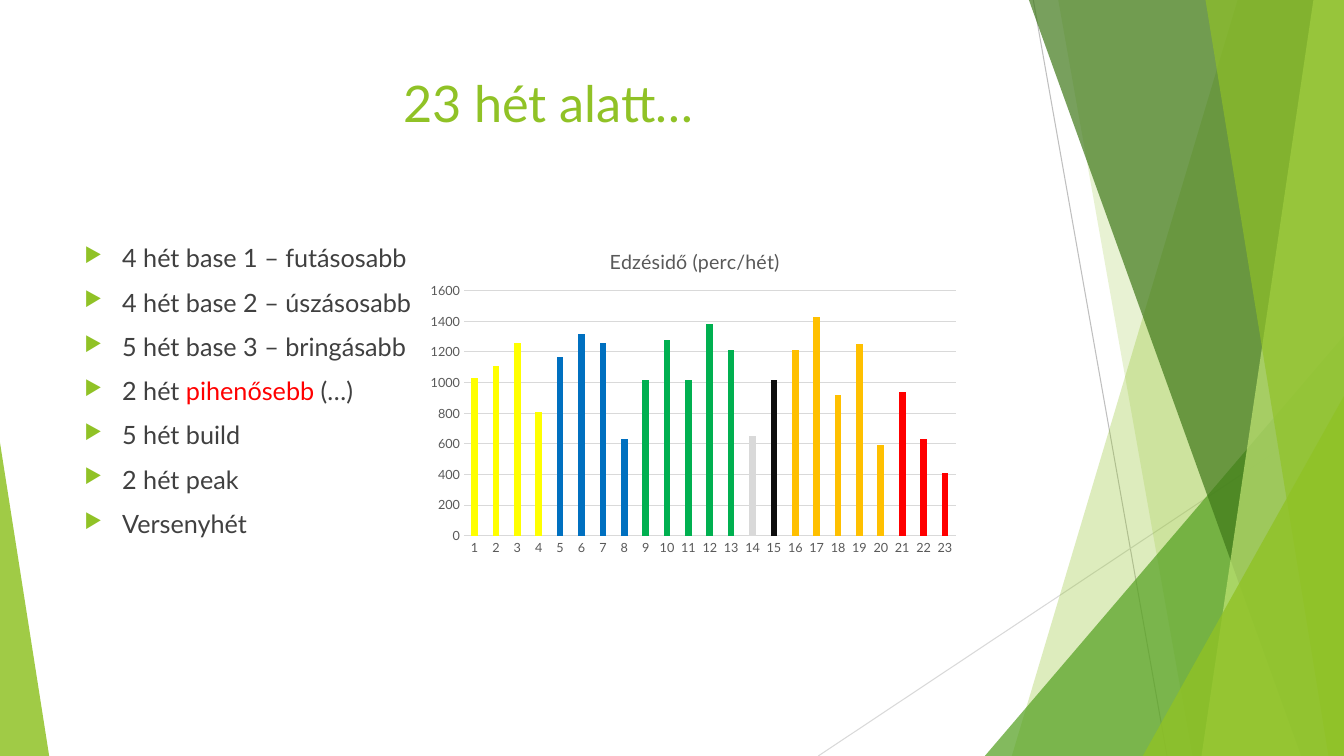
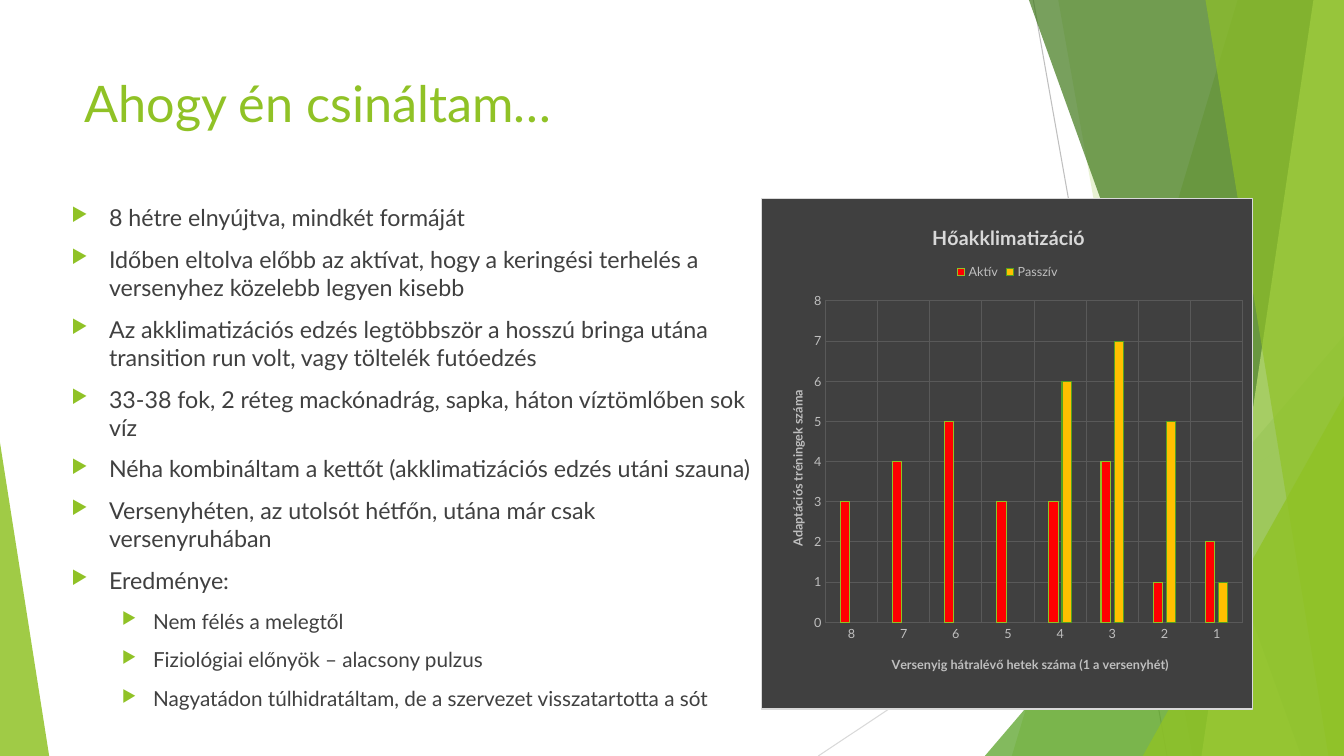
import dataclasses

import lxml.etree
import pptx
import pptx.chart.data
import pptx.dml.color
import pptx.enum.chart
import pptx.enum.shapes
import pptx.enum.text
import pptx.oxml.ns
import pptx.util

Cm = pptx.util.Cm
Pt = pptx.util.Pt
qn = pptx.oxml.ns.qn


@dataclasses.dataclass(frozen=True)
class Theme:
    font: str = "Lato"
    lime: str = "90C226"
    green: str = "54A021"
    forest: str = "3F7819"
    pale: str = "C0E474"
    text: str = "404040"
    accent: str = "FF0000"
    amber: str = "FFC000"
    chart_text: str = "595959"
    light_text: str = "BFBFBF"
    light_title: str = "D9D9D9"
    rule: str = "D9D9D9"
    title_size: float = 36
    chart_title_size: float = 14
    axis_size: float = 9
    hairline: float = 0.75


T = Theme()
WIDTH, HEIGHT = 33.87, 19.05

# Left indent and hanging indent of each bullet level, in cm
INDENTS = [(0.95, -0.95), (2.06, -0.79)]


# Helpers
def rgb(code):
    return pptx.dml.color.RGBColor.from_string(code)


def set_format(obj, fmt):
    for name, value in fmt.items():
        setattr(obj, name, value)


def set_font(font, size, color, bold=False):
    set_format(font, {"name": T.font, "size": Pt(size), "bold": bold})
    font.color.rgb = rgb(color)


def set_line(line, color):
    line.color.rgb = rgb(color)
    line.width = Pt(T.hairline)


def sub(parent, tag, **attrs):
    el = lxml.etree.SubElement(parent, qn(tag))
    for name, value in attrs.items():
        el.set(name, str(value))
    return el


# Backdrop
def style_facet(sp, color, opacity):
    sp.shadow.inherit = False
    sp.fill.solid()
    sp.fill.fore_color.rgb = rgb(color)
    sp.line.fill.background()
    clr = sp.element.spPr.find(qn("a:solidFill")).find(qn("a:srgbClr"))
    sub(clr, "a:alpha", val=opacity * 1000)


def add_rule(s, x1, y1, x2, y2, color):
    c = s.shapes.add_connector(pptx.enum.shapes.MSO_CONNECTOR.STRAIGHT,
                               Cm(x1), Cm(y1), Cm(x2), Cm(y2))
    set_line(c.line, color)
    sub(c.element.spPr, "a:effectLst")


def add_band(s, top_x, bottom_x, color, opacity):
    """Full-height band from a slanted left edge to the slide's right edge."""
    fb = s.shapes.build_freeform(Cm(top_x), 0)
    fb.add_line_segments([(Cm(WIDTH), 0), (Cm(WIDTH), Cm(HEIGHT)),
                          (Cm(bottom_x), Cm(HEIGHT))])
    style_facet(fb.convert_to_shape(), color, opacity)


def add_corner(s, left, top, right, apex, color, opacity):
    """Triangle standing on the slide's bottom edge."""
    sp = s.shapes.add_shape(pptx.enum.shapes.MSO_SHAPE.ISOSCELES_TRIANGLE,
                            Cm(left), Cm(top), Cm(right - left), Cm(HEIGHT - top))
    sp.adjustments[0] = apex
    style_facet(sp, color, opacity)


def add_backdrop(s):
    add_rule(s, 26.04, 0, 29.41, HEIGHT, "BFBFBF")
    add_rule(s, WIDTH, 10.24, 20.62, HEIGHT, T.rule)
    add_band(s, 31.19, 25.5, T.lime, 30)
    add_band(s, 26.67, 30.05, T.lime, 20)
    add_corner(s, 24.82, 8.46, WIDTH, 1, T.green, 72)
    add_band(s, 25.93, 32.79, T.forest, 70)
    add_band(s, 33.1, 30.28, T.pale, 70)
    add_band(s, 30.38, 33.48, T.lime, 65)
    add_corner(s, 28.8, 9.98, WIDTH, 1, T.lime, 80)
    add_corner(s, 0, 11.15, 1.24, 0, T.lime, 85)


# Text
def add_text_frame(s, left, top, width, height):
    tf = s.shapes.add_textbox(Cm(left), Cm(top), Cm(width), Cm(height)).text_frame
    tf.word_wrap = True
    return tf


def add_run(p, text, size, color):
    r = p.add_run()
    r.text = text
    set_font(r.font, size, color)


def add_title(s, text, align):
    p = add_text_frame(s, 1.88, 1.7, 23.88, 3.66).paragraphs[0]
    p.alignment = align
    add_run(p, text, T.title_size, T.lime)


def add_bullets(s, box, items, sizes):
    """Each item is (level, [(text, color), ...])."""
    tf = add_text_frame(s, *box)
    for i, (level, runs) in enumerate(items):
        p = tf.add_paragraph() if i else tf.paragraphs[0]
        set_format(p, {"level": level, "space_before": Pt(10)})
        pPr = p._p.get_or_add_pPr()
        margin, hang = INDENTS[level]
        pPr.set("marL", str(Cm(margin)))
        pPr.set("indent", str(Cm(hang)))
        sub(sub(pPr, "a:buClr"), "a:srgbClr", val=T.lime)
        sub(pPr, "a:buSzPct", val=80000)
        sub(pPr, "a:buChar", char="▶")
        for text, color in runs:
            add_run(p, text, sizes[level], color)


# Charts
def place(el, index, **fractions):
    """Put a chart part at fractions of the chart's size."""
    for old in el.findall(qn("c:layout")):
        el.remove(old)
    layout = lxml.etree.Element(qn("c:layout"))
    manual = sub(layout, "c:manualLayout")
    if "w" in fractions:
        sub(manual, "c:layoutTarget", val="inner")
    for axis in "xy":
        sub(manual, f"c:{axis}Mode", val="edge")
    for name, value in fractions.items():
        sub(manual, f"c:{name}", val=value)
    el.insert(index, layout)


def set_chart_title(owner, title, text, size, color, bold, x, y):
    set_format(owner, {"has_title": True})
    tf = getattr(owner, title).text_frame
    tf.text = text
    set_font(tf.paragraphs[0].runs[0].font, size, color, bold)
    place(getattr(owner, title)._element, 1, x=x, y=y)


def style_axis(axis, color, grid=None, line=None):
    none = pptx.enum.chart.XL_TICK_MARK.NONE
    set_format(axis, {"major_tick_mark": none, "minor_tick_mark": none,
                      "has_major_gridlines": grid is not None})
    set_font(axis.tick_labels.font, T.axis_size, color)
    if grid:
        set_line(axis.major_gridlines.format.line, grid)
    if line:
        set_line(axis.format.line, line)
    else:
        axis.format.line.fill.background()


def add_column_chart(s, box, cats, series, gap, overlap, top, step, plot_area):
    data = pptx.chart.data.CategoryChartData()
    data.categories = cats
    for name, values in series:
        data.add_series(name, values)
    chart = s.shapes.add_chart(pptx.enum.chart.XL_CHART_TYPE.COLUMN_CLUSTERED,
                               *map(Cm, box), data).chart
    set_font(chart.font, 10, "000000")
    chart.has_legend = False
    set_format(chart.plots[0], {"gap_width": gap, "overlap": overlap,
                                "vary_by_categories": False})
    set_format(chart.value_axis, {"minimum_scale": 0, "maximum_scale": top,
                                  "major_unit": step})
    place(chart.element.find(qn("c:chart")).find(qn("c:plotArea")), 0, **plot_area)
    return chart


def fill_bar(bar, color, line=None):
    bar.format.fill.solid()
    bar.format.fill.fore_color.rgb = rgb(color)
    if line:
        set_line(bar.format.line, line)


def fill_chart_area(chart, color, border):
    spPr = lxml.etree.Element(qn("c:spPr"))
    sub(sub(spPr, "a:solidFill"), "a:srgbClr", val=color)
    ln = sub(spPr, "a:ln", w=Pt(T.hairline))
    sub(sub(ln, "a:solidFill"), "a:srgbClr", val=border)
    chart.element.find(qn("c:chart")).addnext(spPr)


# Slides
def build_weeks(s):
    add_title(s, "23 hét alatt…", pptx.enum.text.PP_ALIGN.CENTER)
    lines = ["4 hét base 1 – futásosabb", "4 hét base 2 – úszásosabb",
             "5 hét base 3 – bringásabb", "2 hét |pihenősebb| (…)",
             "5 hét build", "2 hét peak", "Versenyhét"]
    # Text between bars is highlighted
    items = [(0, [(part, T.accent if i % 2 else T.text)
                  for i, part in enumerate(line.split("|"))]) for line in lines]
    add_bullets(s, (1.88, 5.99, 23.88, 10.77), items, [18])

    phases = [("FFFF00", [1030, 1110, 1260, 810]),
              ("0070C0", [1170, 1320, 1260, 630]),
              ("00B050", [1020, 1280, 1020, 1380, 1210]),
              ("D9D9D9", [650]),
              ("0D0D0D", [1020]),
              (T.amber, [1210, 1430, 920, 1250, 590]),
              (T.accent, [940, 630, 410])]
    bars = [(color, v) for color, values in phases for v in values]
    chart = add_column_chart(
        s, (10.59, 5.72, 13.77, 8.46), [str(i + 1) for i in range(len(bars))],
        [("Edzésidő", [v for _, v in bars])], 219, -27, 1600, 200,
        {"x": 0.08, "y": 0.19, "w": 0.9, "h": 0.73})
    set_chart_title(chart, "chart_title", "Edzésidő (perc/hét)",
                    T.chart_title_size, T.chart_text, False, 0.34, 0.05)
    style_axis(chart.category_axis, T.chart_text, line=T.rule)
    style_axis(chart.value_axis, T.chart_text, grid=T.rule)
    ser = chart.plots[0].series[0]
    fill_bar(ser, T.lime)
    for i, (color, _) in enumerate(bars):
        fill_bar(ser.points[i], color)


def build_heat(s):
    add_title(s, "Ahogy én csináltam…", pptx.enum.text.PP_ALIGN.LEFT)
    points = [
        "8 hétre elnyújtva, mindkét formáját",
        "Időben eltolva előbb az aktívat, hogy a keringési terhelés a versenyhez közelebb legyen kisebb",
        "Az akklimatizációs edzés legtöbbször a hosszú bringa utána transition run volt, vagy töltelék futóedzés",
        "33-38 fok, 2 réteg mackónadrág, sapka, háton víztömlőben sok víz",
        "Néha kombináltam a kettőt (akklimatizációs edzés utáni szauna)",
        "Versenyhéten, az utolsót hétfőn, utána már csak versenyruhában",
        "Eredménye:"]
    results = ["Nem félés a melegtől",
               "Fiziológiai előnyök – alacsony pulzus",
               "Nagyatádon túlhidratáltam, de a szervezet visszatartotta a sót"]
    items = [(level, [(text, T.text)])
             for level, texts in enumerate([points, results]) for text in texts]
    add_bullets(s, (1.55, 5, 17.6, 13.31), items, [16.6, 14.8])

    chart = add_column_chart(
        s, (19.18, 5, 12.4, 12.88), [str(week) for week in range(8, 0, -1)],
        [("Aktív", [3, 4, 5, 3, 3, 4, 1, 2]),
         ("Passzív", [None] * 4 + [6, 7, 5, 1])], 315, -40, 8, 1,
        {"x": 0.13, "y": 0.2, "w": 0.85, "h": 0.63})
    fill_chart_area(chart, T.text, T.rule)
    set_chart_title(chart, "chart_title", "Hőakklimatizáció",
                    T.chart_title_size, T.light_title, True, 0.34, 0.04)
    for axis, text, x, y in [
            (chart.category_axis, "Versenyig hátralévő hetek száma (1 a versenyhét)", 0.26, 0.89),
            (chart.value_axis, "Adaptációs tréningek száma", 0.05, 0.37)]:
        style_axis(axis, T.light_text, grid=T.chart_text)
        set_chart_title(axis, "axis_title", text, T.axis_size, T.light_text, True, x, y)
    chart.has_legend = True
    set_format(chart.legend, {"position": pptx.enum.chart.XL_LEGEND_POSITION.TOP,
                              "include_in_layout": False})
    set_font(chart.legend.font, T.axis_size, T.light_text)
    place(chart.legend._element, 1, x=0.39, y=0.12)
    for ser, color, line in zip(chart.plots[0].series, (T.accent, T.amber),
                                (T.lime, T.green)):
        fill_bar(ser, color, line)


def main():
    prs = pptx.Presentation()
    set_format(prs, {"slide_width": Cm(WIDTH), "slide_height": Cm(HEIGHT)})
    for build in (build_weeks, build_heat):
        s = prs.slides.add_slide(prs.slide_layouts[6])
        add_backdrop(s)
        build(s)
    prs.save("out.pptx")


if __name__ == "__main__":
    main()
